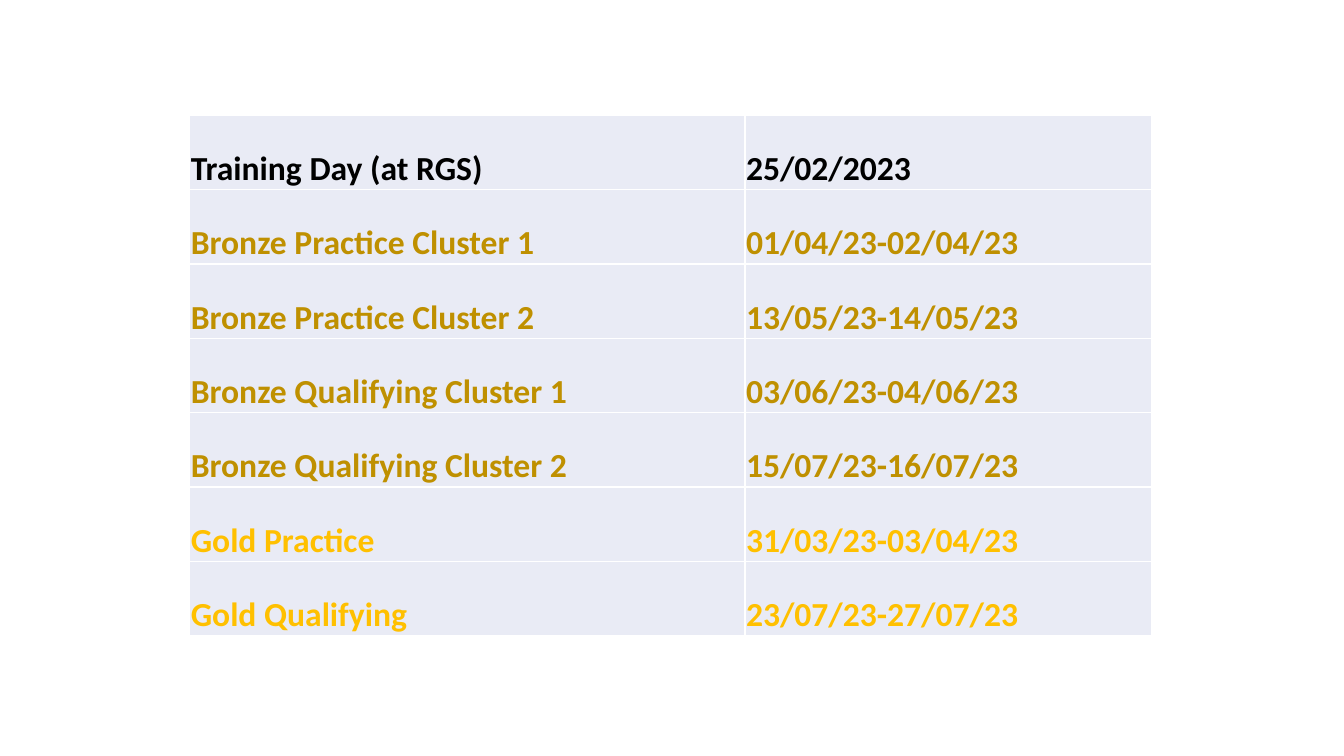
"""Build a slide with a table of training and expedition dates."""
import dataclasses

import lxml.etree
import pptx
import pptx.dml.color
import pptx.enum.text
import pptx.oxml.ns
import pptx.table
import pptx.util

Pt = pptx.util.Pt
RGBColor = pptx.dml.color.RGBColor

BLACK = RGBColor(0x00, 0x00, 0x00)
BRONZE = RGBColor(0xBF, 0x90, 0x00)
GOLD = RGBColor(0xFF, 0xC0, 0x00)
WHITE = RGBColor(0xFF, 0xFF, 0xFF)
CELL_FILL = RGBColor(0xE9, 0xEB, 0xF5)

TABLE_LEFT, TABLE_TOP = Pt(135.6), Pt(82.4)
COLUMN_WIDTHS = (Pt(396.6), Pt(290.3))
ROW_HEIGHT = Pt(53.1)
BORDER_WIDTH = Pt(1)

TABLE_FORMAT = {"first_row": False, "horz_banding": False}
CELL_FORMAT = {
    "margin_left": Pt(0.7),
    "margin_right": Pt(0.7),
    "margin_top": Pt(0.7),
    "margin_bottom": Pt(0),
    "vertical_anchor": pptx.enum.text.MSO_ANCHOR.BOTTOM,
}
FONT_FORMAT = {"name": "Calibri", "size": Pt(24), "bold": True}


@dataclasses.dataclass(frozen=True)
class Event:
    """One dated event in the schedule."""

    name: str
    dates: str
    color: RGBColor


EVENTS = (
    Event("Training Day (at RGS)", "25/02/2023", BLACK),
    Event("Bronze Practice Cluster 1", "01/04/23-02/04/23", BRONZE),
    Event("Bronze Practice Cluster 2", "13/05/23-14/05/23", BRONZE),
    Event("Bronze Qualifying Cluster 1", "03/06/23-04/06/23", BRONZE),
    Event("Bronze Qualifying Cluster 2", "15/07/23-16/07/23", BRONZE),
    Event("Gold Practice", "31/03/23-03/04/23", GOLD),
    Event("Gold Qualifying", "23/07/23-27/07/23", GOLD),
)


def apply_format(target: object, values: dict) -> None:
    """Set each named attribute of the target."""
    for name, value in values.items():
        setattr(target, name, value)


def add_borders(cell: pptx.table._Cell) -> None:
    """Give the cell a white line on every side."""
    qualify = pptx.oxml.ns.qn
    properties = cell._tc.get_or_add_tcPr()
    for side in ("a:lnL", "a:lnR", "a:lnT", "a:lnB"):
        line = lxml.etree.SubElement(properties, qualify(side), w=str(BORDER_WIDTH))
        fill = lxml.etree.SubElement(line, qualify("a:solidFill"))
        lxml.etree.SubElement(fill, qualify("a:srgbClr"), val=str(WHITE))


def fill_cell(cell: pptx.table._Cell, text: str, color: RGBColor) -> None:
    """Write and format one cell."""
    apply_format(cell, CELL_FORMAT)
    add_borders(cell)
    cell.fill.solid()
    cell.fill.fore_color.rgb = CELL_FILL
    run = cell.text_frame.paragraphs[0].add_run()
    run.text = text
    apply_format(run.font, FONT_FORMAT)
    run.font.color.rgb = color


def main() -> None:
    """Create the presentation and save it."""
    presentation = pptx.Presentation()
    apply_format(presentation, {"slide_width": Pt(960), "slide_height": Pt(540)})
    slide = presentation.slides.add_slide(presentation.slide_layouts[6])
    shape = slide.shapes.add_table(
        len(EVENTS), len(COLUMN_WIDTHS), TABLE_LEFT, TABLE_TOP,
        sum(COLUMN_WIDTHS), ROW_HEIGHT * len(EVENTS),
    )
    table = shape.table
    apply_format(table, TABLE_FORMAT)
    for column, width in zip(table.columns, COLUMN_WIDTHS):
        column.width = width
    for row, event in zip(table.rows, EVENTS):
        row.height = ROW_HEIGHT
        for cell, text in zip(row.cells, (event.name, event.dates)):
            fill_cell(cell, text, event.color)
    presentation.save("out.pptx")


if __name__ == "__main__":
    main()
